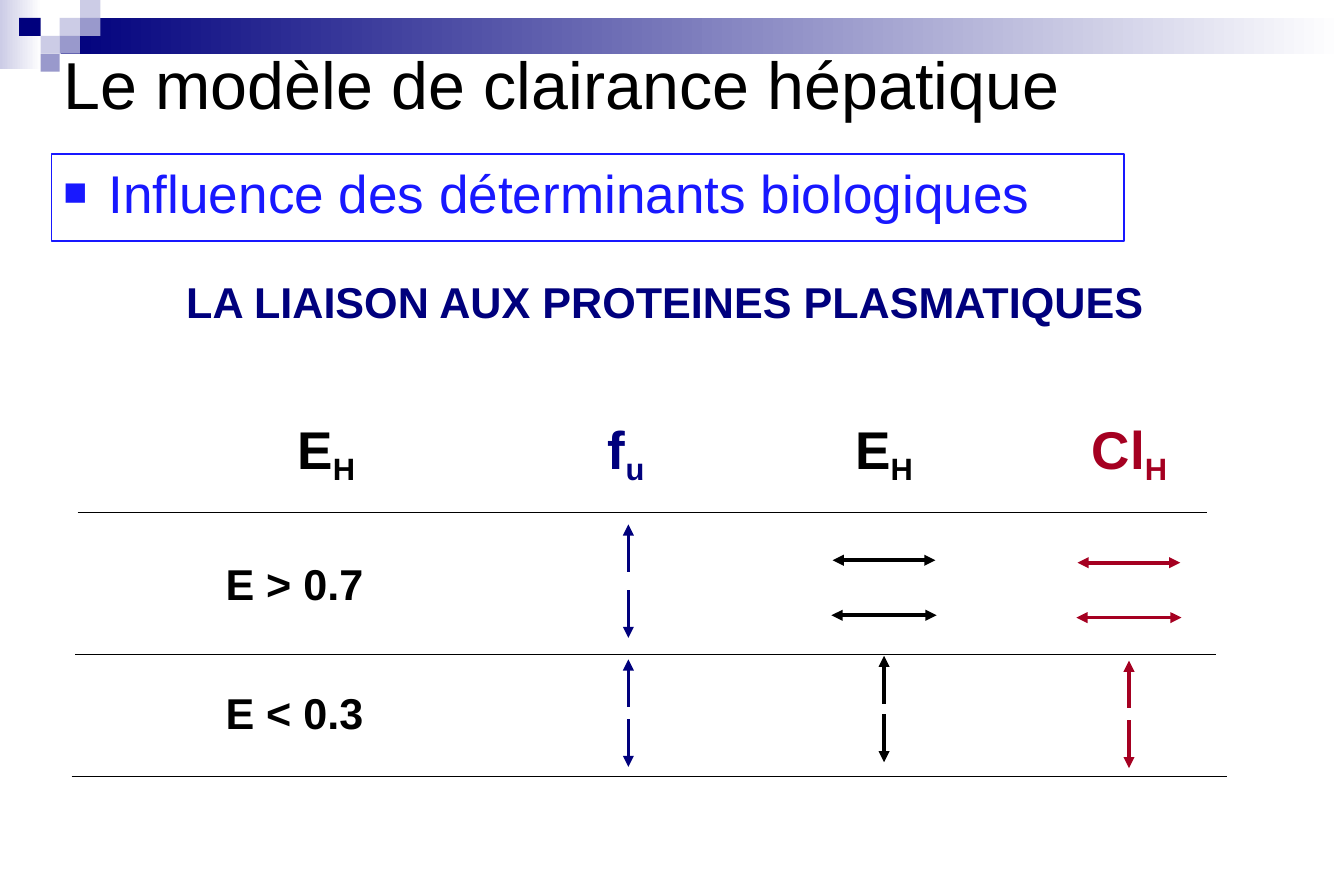
import dataclasses

import lxml.etree
import pptx
import pptx.dml.color
import pptx.enum.dml
import pptx.enum.shapes
import pptx.enum.text
import pptx.oxml.ns
import pptx.util

Inches = pptx.util.Inches
qn = pptx.oxml.ns.qn

FONT = "Arial"
COLORS = {
    "black": "000000", "white": "FFFFFF", "navy": "00007D", "blue": "1818FF",
    "red": "A50021", "pale": "CCCCE6", "lavender": "9999CC",
}


@dataclasses.dataclass
class Band:
    left: float
    top: float
    width: float
    height: float
    color: str


@dataclasses.dataclass
class Tile:
    column: int
    row: int
    color: str


@dataclasses.dataclass
class Label:
    left: float
    top: float
    width: float
    height: float
    text: str
    size: int
    color: str = "black"
    subscript: str = ""


@dataclasses.dataclass
class Rule:
    left: float
    right: float
    y: float


@dataclasses.dataclass
class UpDownPair:
    x: float
    up_top: float
    down_top: float
    color: str


@dataclasses.dataclass
class StablePair:
    center: float
    top: float
    color: str


TILE_EDGES = [0.16, 0.34, 0.5, 0.67, 0.84]
TILE_HEIGHT = 0.15
ARROW_LENGTH = 0.4
STABLE_WIDTHS = [0.86, 0.88]
STABLE_STEP = 0.46

BANDS = [Band(0, 0, 0.35, 0.58, "pale"), Band(0.51, 0.15, 10.74, 0.3, "navy")]
TILES = [
    Tile(2, 1, "pale"), Tile(3, 0, "pale"), Tile(3, 1, "lavender"), Tile(1, 2, "pale"),
    Tile(0, 1, "navy"), Tile(2, 2, "lavender"), Tile(1, 3, "lavender"),
]
LABELS = [
    Label(1.46, 2.26, 8.28, 0.54, "LA LIAISON AUX PROTEINES PLASMATIQUES", 26, "navy"),
    Label(2.39, 3.44, 0.72, 0.64, "E", 32, "black", "H"),
    Label(4.99, 3.44, 0.52, 0.64, "f", 32, "navy", "u"),
    Label(7.06, 3.44, 0.72, 0.64, "E", 32, "black", "H"),
    Label(9.04, 3.44, 0.86, 0.64, "Cl", 32, "red", "H"),
    Label(1.79, 4.62, 1.5, 0.53, "E > 0.7", 26),
    Label(1.79, 5.7, 1.5, 0.53, "E < 0.3", 26),
]
RULES = [Rule(0.65, 10.1, 4.29), Rule(0.63, 10.18, 5.48), Rule(0.6, 10.27, 6.5)]
UP_DOWN_PAIRS = [
    UpDownPair(5.26, 4.39, 4.94, "navy"), UpDownPair(5.26, 5.52, 6.02, "navy"),
    UpDownPair(7.4, 5.49, 5.98, "black"), UpDownPair(9.45, 5.53, 6.03, "red"),
]
STABLE_PAIRS = [StablePair(7.4, 4.69, "black"), StablePair(9.45, 4.71, "red")]


def rgb(color: str) -> pptx.dml.color.RGBColor:
    return pptx.dml.color.RGBColor.from_string(COLORS[color])


def add_run(paragraph, text: str, size: int, color: str, bold: bool = False):
    run = paragraph.add_run()
    run.text = text
    run.font.name = FONT
    run.font.size = pptx.util.Pt(size)
    run.font.bold = bold
    run.font.color.rgb = rgb(color)
    return run


def add_block(slide, left: float, top: float, width: float, height: float):
    shape = slide.shapes.add_shape(
        pptx.enum.shapes.MSO_SHAPE.RECTANGLE,
        Inches(left), Inches(top), Inches(width), Inches(height))
    shape.shadow.inherit = False
    shape.line.fill.background()
    return shape


def draw_band(slide, band: Band) -> None:
    shape = add_block(slide, band.left, band.top, band.width, band.height)
    shape.fill.gradient()
    shape.fill.gradient_angle = 0
    for stop, color in zip(shape.fill.gradient_stops, [band.color, "white"]):
        stop.color.rgb = rgb(color)


def draw_tile(slide, tile: Tile) -> None:
    left, right = TILE_EDGES[tile.column:tile.column + 2]
    shape = add_block(slide, left, tile.row * TILE_HEIGHT, right - left, TILE_HEIGHT)
    shape.fill.solid()
    shape.fill.fore_color.rgb = rgb(tile.color)


def draw_label(slide, label: Label) -> None:
    box = slide.shapes.add_textbox(
        Inches(label.left), Inches(label.top), Inches(label.width), Inches(label.height))
    box.text_frame.word_wrap = True
    box.text_frame.auto_size = pptx.enum.text.MSO_AUTO_SIZE.NONE
    # The boxes fit their text closely, so the right inset is left free
    box.text_frame.margin_right = 0
    paragraph = box.text_frame.paragraphs[0]
    add_run(paragraph, label.text, label.size, label.color, bold=True)
    if label.subscript:
        run = add_run(paragraph, label.subscript, label.size, label.color, bold=True)
        run.font._element.set("baseline", "-20000")


def draw_line(slide, start: tuple[float, float], end: tuple[float, float],
              color: str, width: float, arrows: tuple[str, ...] = ()) -> None:
    line = slide.shapes.add_connector(
        pptx.enum.shapes.MSO_CONNECTOR.STRAIGHT,
        Inches(start[0]), Inches(start[1]), Inches(end[0]), Inches(end[1]))
    line.line.color.rgb = rgb(color)
    line.line.width = pptx.util.Pt(width)
    for arrow in arrows:
        lxml.etree.SubElement(line.line._ln, qn(f"a:{arrow}"), type="triangle")
    lxml.etree.SubElement(line._element.spPr, qn("a:effectLst"))


def draw_up_down(slide, pair: UpDownPair) -> None:
    for top, arrow in [(pair.up_top, "headEnd"), (pair.down_top, "tailEnd")]:
        draw_line(slide, (pair.x, top), (pair.x, top + ARROW_LENGTH),
                  pair.color, 2.25, (arrow,))


def draw_stable(slide, pair: StablePair) -> None:
    for index, width in enumerate(STABLE_WIDTHS):
        y = pair.top + index * STABLE_STEP
        draw_line(slide, (pair.center - width / 2, y), (pair.center + width / 2, y),
                  pair.color, 2.25, ("headEnd", "tailEnd"))


def fill_placeholder(shape, left: float, top: float, width: float, height: float,
                     text: str, size: int, color: str, anchor):
    shape.left, shape.top = Inches(left), Inches(top)
    shape.width, shape.height = Inches(width), Inches(height)
    frame = shape.text_frame
    frame.auto_size = pptx.enum.text.MSO_AUTO_SIZE.NONE
    frame.vertical_anchor = anchor
    paragraph = frame.paragraphs[0]
    paragraph.alignment = pptx.enum.text.PP_ALIGN.LEFT
    add_run(paragraph, text, size, color)
    return paragraph


def set_square_bullet(paragraph, color: str) -> None:
    properties = paragraph._p.get_or_add_pPr()
    properties.set("marL", str(Inches(0.38)))
    properties.set("indent", str(Inches(-0.38)))
    bullet_color = lxml.etree.SubElement(properties, qn("a:buClr"))
    lxml.etree.SubElement(bullet_color, qn("a:srgbClr"), val=COLORS[color])
    lxml.etree.SubElement(properties, qn("a:buSzPct"), val="75000")
    lxml.etree.SubElement(properties, qn("a:buFont"), typeface=FONT)
    lxml.etree.SubElement(properties, qn("a:buChar"), char="■")


def main() -> None:
    presentation = pptx.Presentation()
    presentation.slide_width, presentation.slide_height = Inches(11.25), Inches(7.5)
    slide = presentation.slides.add_slide(presentation.slide_layouts[1])

    # Title and framed bullet
    anchors = pptx.enum.text.MSO_ANCHOR
    fill_placeholder(slide.shapes.title, 0.43, 0.36, 9.78, 0.67,
                     "Le modèle de clairance hépatique", 40, "black", anchors.MIDDLE)
    body = slide.placeholders[1]
    paragraph = fill_placeholder(body, 0.43, 1.29, 8.98, 0.73,
                                 "Influence des déterminants biologiques", 32, "blue",
                                 anchors.TOP)
    set_square_bullet(paragraph, "blue")
    body.line.color.rgb = rgb("blue")
    body.line.width = pptx.util.Pt(1)

    # Header decoration
    for band in BANDS:
        draw_band(slide, band)
    for tile in TILES:
        draw_tile(slide, tile)

    # Comparison grid
    for label in LABELS:
        draw_label(slide, label)
    for rule in RULES:
        draw_line(slide, (rule.left, rule.y), (rule.right, rule.y), "black", 1)
    for pair in UP_DOWN_PAIRS:
        draw_up_down(slide, pair)
    for pair in STABLE_PAIRS:
        draw_stable(slide, pair)

    presentation.save("out.pptx")


if __name__ == "__main__":
    main()
